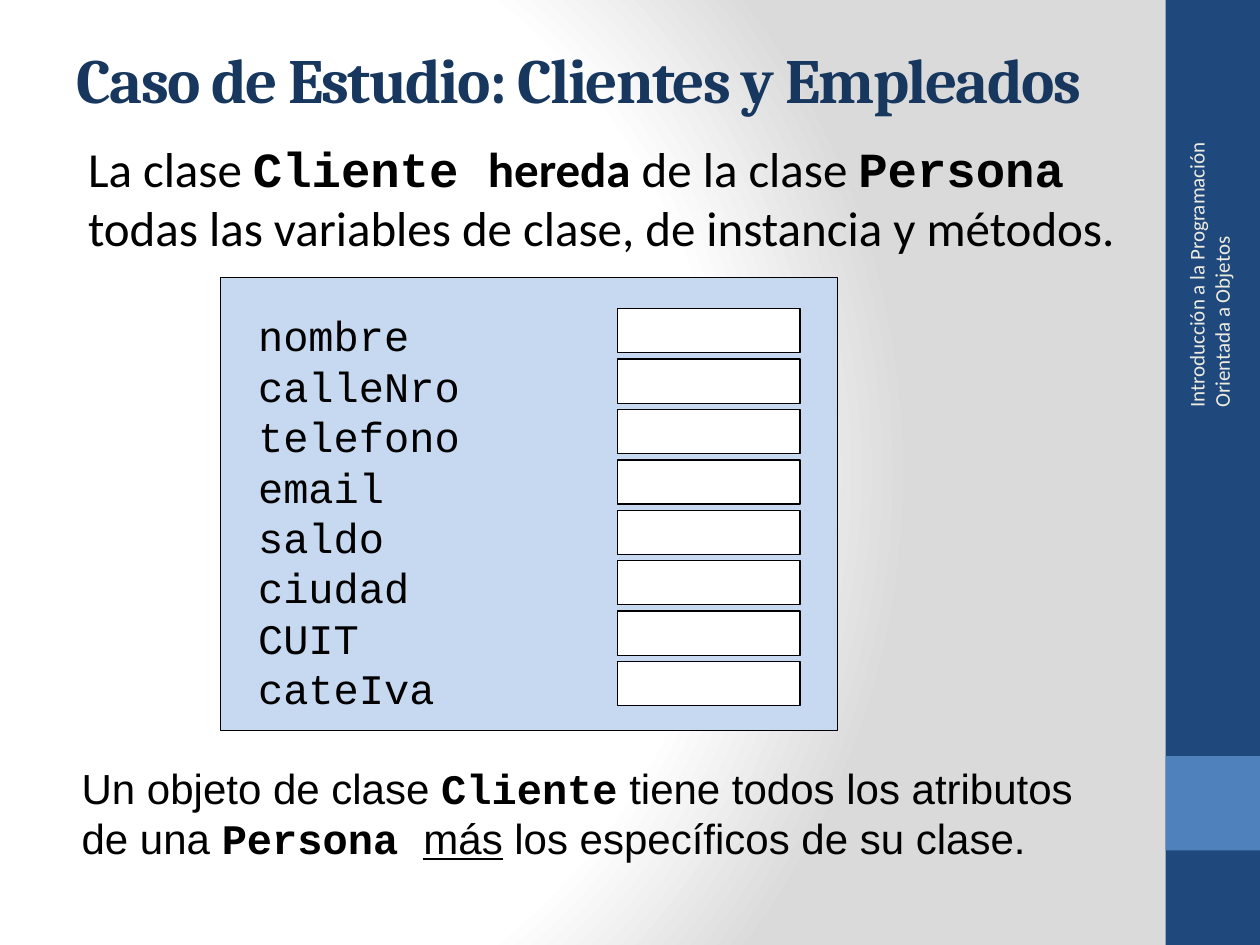
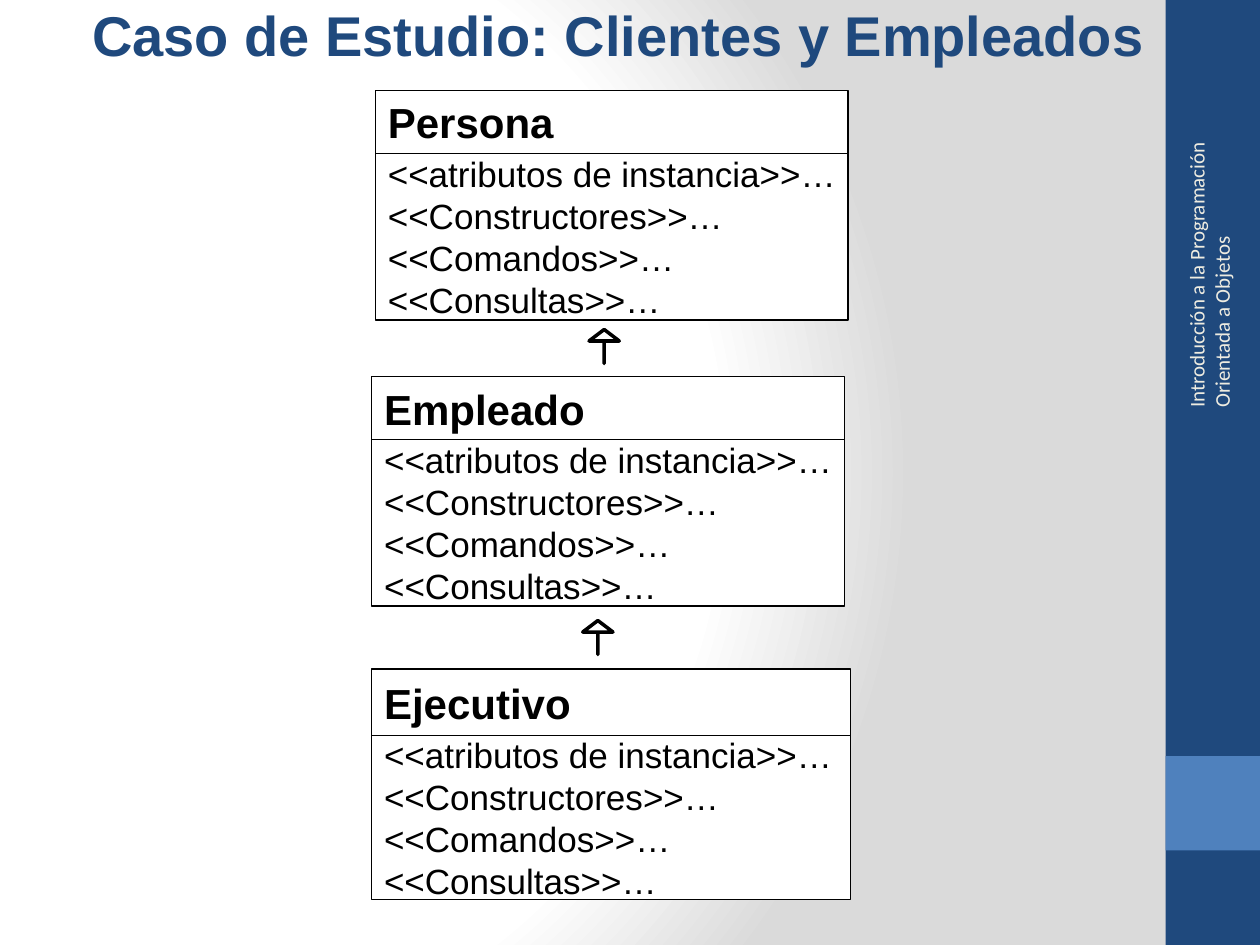
import pptx
import pptx.dml.color
import pptx.enum.shapes
import pptx.enum.text
import pptx.oxml
import pptx.oxml.ns
import pptx.util

Inches = pptx.util.Inches
Pt = pptx.util.Pt
RGB = pptx.dml.color.RGBColor
Kind = pptx.enum.shapes.MSO_SHAPE
Align = pptx.enum.text.PP_ALIGN
Anchor = pptx.enum.text.MSO_ANCHOR
Fit = pptx.enum.text.MSO_AUTO_SIZE

BLACK = RGB(0x00, 0x00, 0x00)
WHITE = RGB(0xFF, 0xFF, 0xFF)
NAVY = RGB(0x1F, 0x49, 0x7D)
DARK = RGB(0x17, 0x37, 0x5E)
BLUE = RGB(0x4F, 0x81, 0xBD)
PALE = RGB(0xC6, 0xD9, 0xF1)
CREAM = RGB(0xEE, 0xEC, 0xE1)

SANS, BODY, SERIF, MONO = "Arial", "Calibri", "Cambria", "Courier New"

TITLE = "Caso de Estudio: Clientes y Empleados"
COURSE = "Introducción a la Programación Orientada a Objetos"
FIELDS = ["nombre", "calleNro", "telefono", "email",
          "saldo", "ciudad", "CUIT", "cateIva"]
PARTS = ["<<atributos de instancia>>…", "<<Constructores>>…",
         "<<Comandos>>…", "<<Consultas>>…"]

BACK = f"""<p:bg {pptx.oxml.ns.nsdecls("p", "a")}><p:bgPr>
<a:gradFill rotWithShape="1"><a:gsLst>
<a:gs pos="0"><a:srgbClr val="FFFFFF"/></a:gs>
<a:gs pos="75000"><a:srgbClr val="FFFFFF"/></a:gs>
<a:gs pos="100000"><a:srgbClr val="DADADA"/></a:gs>
</a:gsLst><a:path path="circle">
<a:fillToRect l="20000" t="50000" r="100000" b="50000"/>
</a:path></a:gradFill><a:effectLst/></p:bgPr></p:bg>"""


class Deck:
    """The shared style and the slide being drawn."""

    def __init__(self):
        self.prs = pptx.Presentation()
        self.prs.slide_width = Inches(10)
        self.prs.slide_height = Inches(7.5)
        self.slide = None
        base = self.prs.slide_master.element.cSld
        old = base.find(pptx.oxml.ns.qn("p:bg"))
        if old is not None:
            base.remove(old)
        base.insert(0, pptx.oxml.parse_xml(BACK))

    def start(self):
        """Add a slide with its side bands and course name."""
        self.slide = self.prs.slides.add_slide(self.prs.slide_layouts[5])
        self.box(9.25, 0, 0.75, 7.5, NAVY, None)
        self.box(9.25, 6, 0.75, 0.75, BLUE, None)
        side = self.text(8.26, 1.8, 2.67, 0.4, [COURSE], 12, BODY, CREAM)
        side.text_frame.vertical_anchor = Anchor.MIDDLE
        side.rotation = 270

    def put(self, frame, lines, size, face, color=BLACK, bold=False,
            align=Align.LEFT):
        """Fill a frame; a line is a string or a list of (text, font changes)."""
        for i, line in enumerate(lines):
            para = frame.paragraphs[0] if i == 0 else frame.add_paragraph()
            para.alignment = align
            font = para.font
            font.size, font.name, font.bold = Pt(size), face, bold
            font.color.rgb = color
            runs = [(line, {})] if isinstance(line, str) else line
            for words, change in runs:
                run = para.add_run()
                run.text = words
                if "name" in change:
                    run.font.name = change["name"]
                if "bold" in change:
                    run.font.bold = change["bold"]
                if "underline" in change:
                    run.font.underline = change["underline"]

    def title(self, x, y, w, h, size, face, color, align, track=0):
        head = self.slide.shapes.title
        head.left, head.top = Inches(x), Inches(y)
        head.width, head.height = Inches(w), Inches(h)
        frame = head.text_frame
        frame.auto_size = Fit.NONE
        frame.vertical_anchor = Anchor.MIDDLE
        self.put(frame, [TITLE], size, face, color, True, align)
        if track:
            run = frame.paragraphs[0].runs[0]
            run._r.get_or_add_rPr().set("spc", str(track * 100))

    def text(self, x, y, w, h, lines, size, face, color=BLACK):
        area = self.slide.shapes.add_textbox(
            Inches(x), Inches(y), Inches(w), Inches(h))
        area.text_frame.word_wrap = True
        self.put(area.text_frame, lines, size, face, color)
        return area

    def box(self, x, y, w, h, fill=WHITE, line=BLACK, kind=Kind.RECTANGLE,
            width=0.75):
        item = self.slide.shapes.add_shape(
            kind, Inches(x), Inches(y), Inches(w), Inches(h))
        item.shadow.inherit = False
        item.fill.solid()
        item.fill.fore_color.rgb = fill
        if line is None:
            item.line.fill.background()
        else:
            item.line.color.rgb = line
            item.line.width = Pt(width)
        return item

    def label(self, x, y, w, h, lines, size, bold=False):
        """Draw a white box with text at its left."""
        frame = self.box(x, y, w, h).text_frame
        frame.word_wrap = False
        frame.vertical_anchor = Anchor.MIDDLE
        self.put(frame, lines, size, SANS, bold=bold)

    def entity(self, name, x, y, w, head, body):
        """Draw a class as a name box above its parts."""
        self.label(x, y, w, head, [name], 24, True)
        self.label(x, y + head, w, body, PARTS, 20)

    def arrow(self, x, y):
        item = self.box(x, y, 0.27, 0.24, kind=Kind.RIGHT_ARROW, width=2)
        item.adjustments[0] = 0
        item.adjustments[1] = 0.38
        item.rotation = 270


def client(deck):
    deck.start()
    deck.title(0.51, 0, 8.67, 1.25, 36, SERIF, DARK, Align.LEFT, -1)
    code = {"name": MONO, "bold": True}
    deck.text(0.6, 1.05, 8.98, 1, [[
        ("La clase ", {}), ("Cliente ", code), ("hereda", {"bold": True}),
        (" de la clase ", {}), ("Persona ", code),
        ("todas las variables de clase, de instancia y métodos.", {}),
    ]], 28, BODY)
    deck.box(1.75, 2.2, 4.9, 3.6, PALE)
    for row in range(len(FIELDS)):
        deck.box(4.9, 2.45 + 0.4 * row, 1.45, 0.35)
    deck.text(1.95, 2.41, 2.67, 3.33, FIELDS, 24, MONO)
    deck.text(0.55, 6, 8.46, 1, [[
        ("Un objeto de clase ", {}), ("Cliente", code),
        (" tiene todos los atributos de una ", {}), ("Persona ", code),
        ("más", {"underline": True}),
        (" los específicos de su clase.", {}),
    ]], 24, SANS)


def tree(deck):
    deck.start()
    deck.title(0.5, 0, 8.82, 0.54, 32, SANS, NAVY, Align.CENTER)
    deck.entity("Persona", 2.98, 0.72, 3.75, 0.5, 1.32)
    deck.entity("Empleado", 2.95, 2.99, 3.75, 0.5, 1.32)
    deck.entity("Ejecutivo", 2.95, 5.31, 3.8, 0.53, 1.3)
    deck.arrow(4.66, 2.63)
    deck.arrow(4.61, 4.94)


def main():
    deck = Deck()
    client(deck)
    tree(deck)
    deck.prs.save("out.pptx")


if __name__ == "__main__":
    main()
